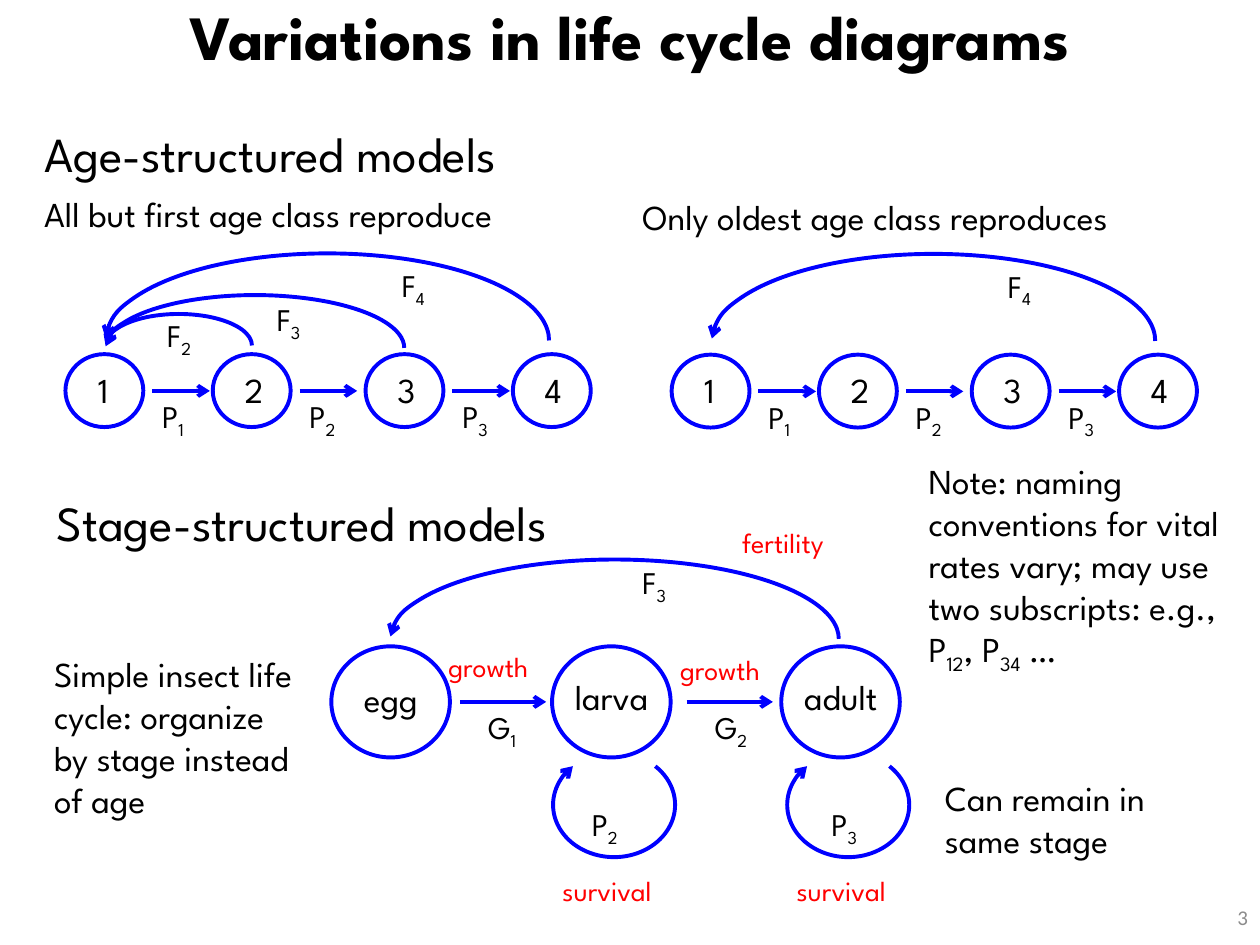
from lxml.etree import SubElement
from pptx import Presentation
from pptx.dml.color import RGBColor
from pptx.enum.shapes import MSO_CONNECTOR, MSO_SHAPE
from pptx.enum.text import MSO_ANCHOR, MSO_AUTO_SIZE, PP_ALIGN
from pptx.oxml.ns import qn
from pptx.util import Cm, Pt

FONT = "League Spartan"
BLACK, RED, BLUE, GREY = "000000", "FF0000", "0000FF", "8C8C8C"


def rgb(value):
    return RGBColor.from_string(value)


def set_all(obj, values):
    for name, value in values.items():
        setattr(obj, name, value)


def fill_text(tf, text, size, color=BLACK, align=PP_ALIGN.LEFT, font=FONT, bold=False):
    p = tf.paragraphs[0]
    p.alignment = align
    for i, part in enumerate(text.split("_")):
        if not part:
            continue
        r = p.add_run()
        r.text = part
        set_all(r.font, {"name": font, "size": Pt(size), "bold": bold})
        r.font.color.rgb = rgb(color)
        if i % 2:
            r._r.get_or_add_rPr().set("baseline", "-25000")
    return p


def add_text(shapes, text, x, y, w, h, size=20, wrap=False, **style):
    tf = shapes.add_textbox(Cm(x), Cm(y), Cm(w), Cm(h)).text_frame
    set_all(tf, {"word_wrap": wrap, "auto_size": MSO_AUTO_SIZE.SHAPE_TO_FIT_TEXT})
    fill_text(tf, text, size, **style)
    return tf


def style_line(sp, arrow_end=None):
    sp.line.color.rgb = rgb(BLUE)
    sp.line.width = Pt(2.25)
    if arrow_end:
        SubElement(sp.line._get_or_add_ln(), qn(arrow_end)).set("type", "arrow")


def add_outline(shapes, kind, x, y, w, h, arrow_end=None):
    sp = shapes.add_shape(kind, Cm(x), Cm(y), Cm(w), Cm(h))
    sp.shadow.inherit = False
    sp.fill.background()
    style_line(sp, arrow_end)
    return sp


def add_arc(shapes, x, y, w, h, start=108.37, end=0):
    sp = add_outline(shapes, MSO_SHAPE.ARC, x, y, w, h, "a:headEnd")
    sp.adjustments[0] = start
    sp.adjustments[1] = end
    return sp


def add_loop(shapes, x, y, w, h):
    sp = add_arc(shapes, x, y, w, h, 82.09, 25.84)
    sp._element.spPr.find(qn("a:xfrm")).set("flipV", "1")


def add_arrow(shapes, x, y, length):
    cn = shapes.add_connector(MSO_CONNECTOR.STRAIGHT, Cm(x), Cm(y), Cm(x + length), Cm(y))
    style_line(cn, "a:tailEnd")
    SubElement(cn._element.spPr, qn("a:effectLst"))


def add_title(s, text, x, y, w, h):
    title = s.shapes.title
    set_all(title, {"left": Cm(x), "top": Cm(y), "width": Cm(w), "height": Cm(h)})
    tf = title.text_frame
    set_all(tf, {"auto_size": MSO_AUTO_SIZE.NONE, "vertical_anchor": MSO_ANCHOR.MIDDLE})
    p = fill_text(tf, text, 36, align=PP_ALIGN.CENTER, bold=True)
    p.line_spacing = 0.9


def add_age_cycle(s, x, y, fertile):
    shapes = s.shapes.add_group_shape().shapes
    circles = [0, 2.97, 6.05, 9.02]
    for age, dx in enumerate(circles, 1):
        add_outline(shapes, MSO_SHAPE.OVAL, x + dx, y + 2.03, 1.57, 1.47)
        add_text(shapes, str(age), x + dx + 0.39, y + 2.19, 0.74, 1.12,
                 wrap=True, align=PP_ALIGN.CENTER)
    for age, dx in enumerate(circles[:-1], 1):
        add_arrow(shapes, x + dx + 1.75, y + 2.77, 1.16)
        add_text(shapes, f"P_{age}", x + dx + 1.7, y + 2.77, 1.19, 1.02, 18)
    arcs = {2: (1.22, 2.95, 1.27), 3: (0.84, 6.02, 2.13), 4: (0, 8.94, 3.51)}
    labels = {2: (1.8, 1.14), 3: (4.01, 0.81), 4: (6.53, 0.13)}
    for age in fertile:
        dy, w, h = arcs[age]
        add_arc(shapes, x + 0.81, y + dy, w, h)
        dx, dy = labels[age]
        add_text(shapes, f"F_{age}", x + dx, y + dy, 1.14, 1.02, 18)


def add_stage_cycle(s, x, y):
    shapes = s.shapes.add_group_shape().shapes
    for name, dx, dy in [("egg", 0, 2.26), ("larva", 4.45, 2.21), ("adult", 9.07, 2.21)]:
        add_outline(shapes, MSO_SHAPE.OVAL, x + dx, y + 1.75, 2.39, 2.24)
        add_text(shapes, name, x + dx - 0.4, y + dy, 3.2, 1.12,
                 wrap=True, align=PP_ALIGN.CENTER)
    for i, dx in enumerate([2.59, 7.16], 1):
        add_arrow(shapes, x + dx, y + 2.87, 1.74)
        add_text(shapes, f"G_{i}", x + dx + 0.32, y + 2.87, 1.27, 1.02, 18)
    add_arc(shapes, x + 1.19, y, 9.04, 3.2)
    add_text(shapes, "F_3", x + 6.02, y - 0.05, 1.73, 1.55, 18)

    for stage, dx, label_dx in [(2, 4.47, 5), (3, 9.19, 9.83)]:
        add_loop(s.shapes, x + dx, y + 3.89, 2.46, 2.11)
        add_text(s.shapes, f"P_{stage}", x + label_dx, y + 4.82, 1.19, 1.02, 18)
        add_text(s.shapes, "survival", x + dx - 0.06, y + 6.2, 2.67, 0.94, 16, color=RED)
    for text, dx, dy in [("growth", 2.11, 1.68), ("growth", 6.78, 1.75), ("fertility", 8.03, -0.81)]:
        add_text(s.shapes, text, x + dx, y + dy, 2.45, 0.94, 16, color=RED)


def add_page_number(s, text, x, y, w, h):
    tf = add_text(s.shapes, text, x, y, w, h, 12, wrap=True, color=GREY,
                  align=PP_ALIGN.RIGHT, font="Calibri")
    set_all(tf, {"auto_size": MSO_AUTO_SIZE.NONE, "vertical_anchor": MSO_ANCHOR.MIDDLE})


def main():
    prs = Presentation()
    set_all(prs, {"slide_width": Cm(25.4), "slide_height": Cm(19.05)})
    s = prs.slides.add_slide(prs.slide_layouts[5])
    add_title(s, "Variations in life cycle diagrams", 0, 0.03, 25.4, 1.57)

    add_text(s.shapes, "Age-structured models", 0.64, 2.36, 11.58, 1.45, 28)
    add_text(s.shapes, "All but first age class reproduce", 0.64, 3.76, 11.43, 1.12)
    add_age_cycle(s, 1.32, 5.11, [2, 3, 4])
    add_text(s.shapes, "Only oldest age class reproduces", 12.7, 3.81, 11.96, 1.12)
    add_age_cycle(s, 13.54, 5.12, [4])

    add_text(s.shapes, "Stage-structured models", 0.89, 9.8, 12.47, 1.45, 28)
    add_stage_cycle(s, 6.68, 11.28)
    add_text(s.shapes, "Simple insect life cycle: organize by stage instead of age",
             0.84, 13.03, 5.36, 4.52, wrap=True)
    add_text(s.shapes, "Can remain in same stage", 18.8, 15.52, 5.72, 1.96, wrap=True)
    add_text(s.shapes, "Note: naming conventions for vital rates vary; may use two "
             "subscripts: e.g., P_12_, P_34_ …", 18.47, 9.14, 6.88, 5.38, wrap=True)
    add_page_number(s, "3", 19.69, 17.98, 5.72, 1.02)
    prs.save("out.pptx")


if __name__ == "__main__":
    main()
